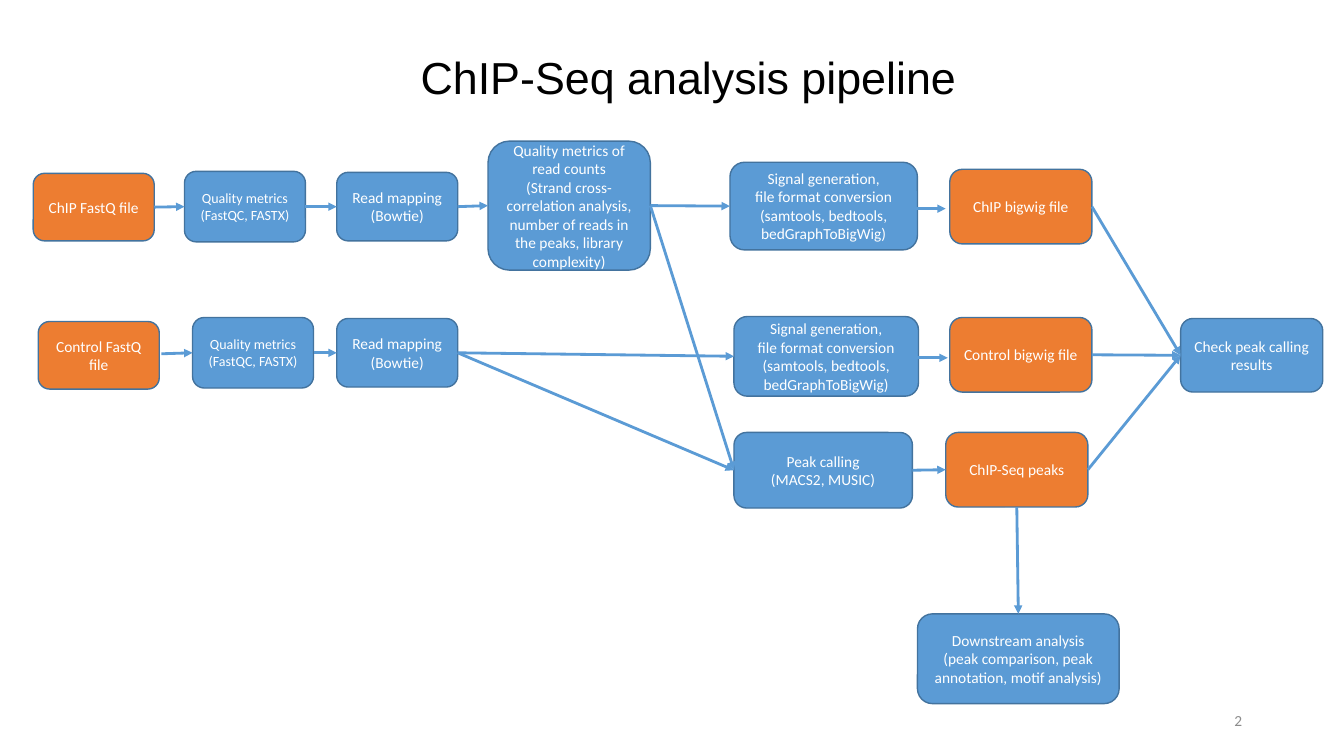
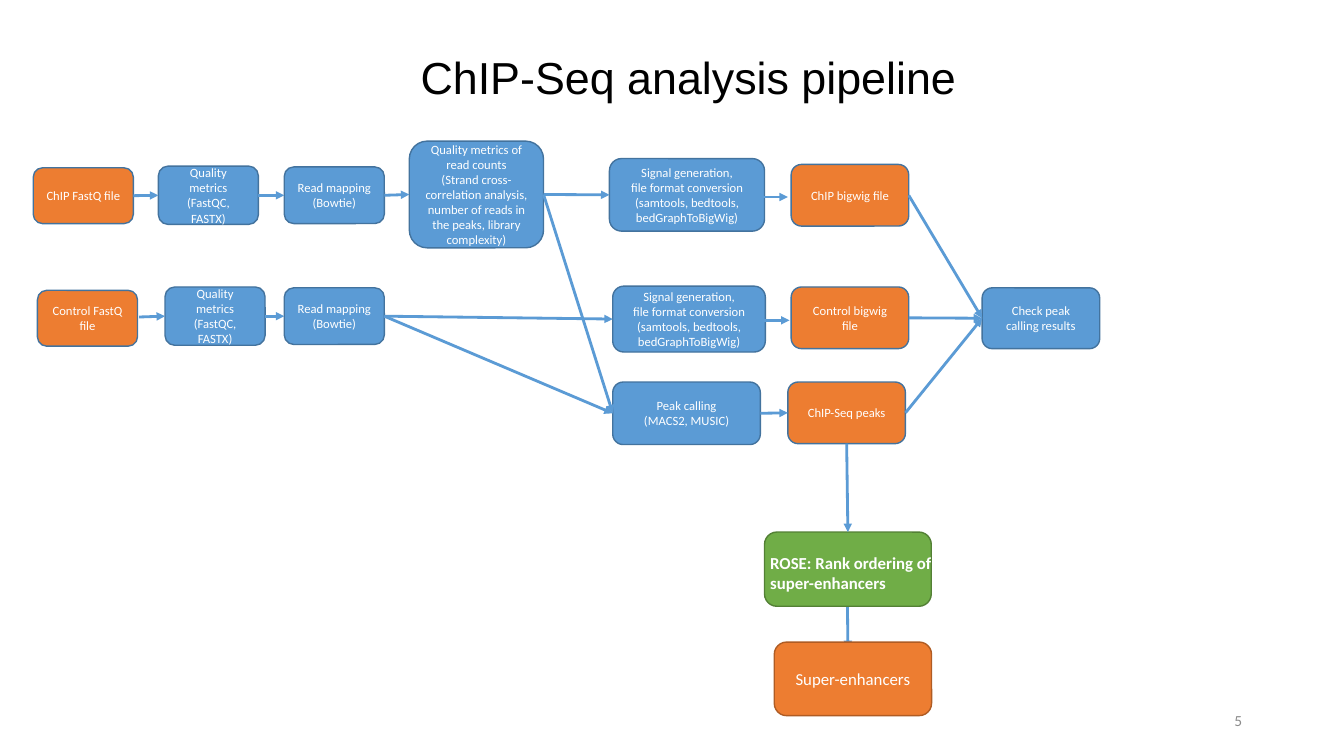
"""Build two slides of the ChIP-Seq analysis pipeline."""
from dataclasses import dataclass
from typing import Any, NamedTuple

from lxml import etree
from pptx import Presentation
from pptx.dml.color import RGBColor
from pptx.enum.shapes import MSO_CONNECTOR, MSO_SHAPE
from pptx.enum.text import MSO_ANCHOR, MSO_AUTO_SIZE, PP_ALIGN
from pptx.oxml.ns import qn
from pptx.util import Pt

ROUND, LINE = MSO_SHAPE.ROUNDED_RECTANGLE, MSO_CONNECTOR.STRAIGHT
MID, TOP = MSO_ANCHOR.MIDDLE, MSO_ANCHOR.TOP
LEFT, MAIN, RIGHT = PP_ALIGN.LEFT, PP_ALIGN.CENTER, PP_ALIGN.RIGHT
PX = 9144
HUE = {
    "black": "000000", "white": "FFFFFF", "gray": "8C8C8C",
    "blue": "5B9BD5", "navy": "43739E", "orange": "ED7D31",
    "rust": "AF5C24", "green": "70AD47", "moss": "538035",
}
FRAME = {"word_wrap": True, "auto_size": MSO_AUTO_SIZE.NONE, "vertical_anchor": MID}


class Rect(NamedTuple):
    """Left, top, width and height in px."""
    x: int
    y: int
    w: int
    h: int


class Spot(NamedTuple):
    """Free end of an arrow in px."""
    x: int
    y: int


class Joint(NamedTuple):
    """Arrow end at a side of a named box."""
    name: str
    side: int


@dataclass(frozen=True)
class Box:
    """Rounded box with its lines of text."""
    name: str
    rect: Rect
    lines: tuple[str, ...]
    fill: str = "blue"
    edge: str = "navy"
    size: int = 11


@dataclass(frozen=True)
class Link:
    """Arrow between two ends."""
    start: Joint | Spot
    end: Joint | Spot


@dataclass(frozen=True)
class View:
    """Zoom of the flow, kept at its top left corner."""
    zoom: float = 1.0
    cap: int = 11

    def spot(self, x: int, y: int) -> tuple[int, int]:
        """Give a point in EMU."""
        return (round((33 + (x - 33) * self.zoom) * PX),
                round((140 + (y - 140) * self.zoom) * PX))

    def rect(self, r: Rect) -> tuple[int, ...]:
        """Give a rectangle in EMU."""
        return *self.spot(r.x, r.y), round(r.w * self.zoom * PX), round(r.h * self.zoom * PX)


FULL, SMALL = View(), View(0.827, 9)
CHECK = ("Quality metrics", "(FastQC, FASTX)")
READ = ("Read mapping", "(Bowtie)")
SIGNAL = ("Signal generation,", "file format conversion", "(samtools, bedtools, bedGraphToBigWig)")
LAST = Rect(910, 609, 200, 89)
FLOW = (
    Box("chip", Rect(33, 172, 120, 67), ("ChIP FastQ file",), "orange"),
    Box("chip check", Rect(183, 170, 120, 70), CHECK, size=10),
    Box("chip map", Rect(334, 171, 120, 68), READ),
    Box("counts", Rect(484, 140, 161, 128), (
        "Quality metrics of read counts",
        "(Strand cross-correlation analysis, number of reads in the peaks, library complexity)")),
    Box("chip signal", Rect(724, 161, 186, 87), SIGNAL),
    Box("chip wig", Rect(942, 168, 141, 74), ("ChIP bigwig file",), "orange"),
    Box("control", Rect(38, 319, 120, 67), ("Control FastQ file",), "orange"),
    Box("control check", Rect(191, 315, 120, 70), CHECK, size=10),
    Box("control map", Rect(334, 316, 120, 68), READ),
    Box("control signal", Rect(728, 314, 183, 79), SIGNAL),
    Box("control wig", Rect(942, 315, 141, 74), ("Control bigwig file",), "orange"),
    Box("call", Rect(728, 429, 177, 75), ("Peak calling", "(MACS2, MUSIC)")),
    Box("peaks", Rect(938, 429, 141, 74), ("ChIP-Seq peaks",), "orange"),
    Box("result", Rect(1171, 316, 141, 73), ("Check peak calling results",)),
)
PAIRS = (
    ("chip", "chip check"), ("chip check", "chip map"), ("chip map", "counts"),
    ("counts", "chip signal"), ("counts", "call"),
    ("control check", "control map"), ("control map", "control signal"),
    ("control map", "call"), ("call", "peaks"),
    ("chip wig", "result"), ("control wig", "result"), ("peaks", "result"),
)
LINKS = (
    *(Link(Joint(a, 3), Joint(b, 1)) for a, b in PAIRS),
    Link(Joint("peaks", 2), Joint("last", 0)),
    Link(Spot(160, 351), Joint("control check", 1)),
    Link(Spot(908, 207), Spot(938, 207)),
    Link(Spot(909, 355), Spot(940, 355)),
)
DOWN = Box("last", LAST, ("Downstream analysis", "(peak comparison, peak annotation, motif analysis)"))
RANK = Box("last", LAST, (), "green", "moss")
SUPER = Box("super", Rect(768, 637, 156, 73), ("Super-enhancers",), "orange", "rust", 12)


def apply(item: Any, form: dict[str, Any]) -> None:
    """Set each format value on the item."""
    for key, val in form.items():
        setattr(item, key, val)


def tint(name: str) -> RGBColor:
    """Look up a colour."""
    return RGBColor.from_string(HUE[name])


def write(frame: Any, lines: tuple[str, ...], size: int, ink: str = "white",
          face: str = "Calibri", align: Any = MAIN, bold: bool = False,
          space: float = 1.0, anchor: Any = MID) -> None:
    """Write lines as paragraphs of one style."""
    apply(frame, FRAME | {"vertical_anchor": anchor})
    frame.text = "\n".join(lines)
    for par in frame.paragraphs:
        apply(par, {"alignment": align, "line_spacing": space})
        for run in par.runs:
            apply(run.font, {"name": face, "size": Pt(size), "bold": bold})
            run.font.color.rgb = tint(ink)


def label(slide: Any, rect: Rect, text: str, size: int, **form: Any) -> None:
    """Add a text box."""
    write(slide.shapes.add_textbox(*FULL.rect(rect)).text_frame, (text,), size, **form)


def draw_box(slide: Any, box: Box, view: View) -> Any:
    """Draw a rounded box."""
    shape = slide.shapes.add_shape(ROUND, *view.rect(box.rect))
    shape.shadow.inherit = False
    shape.fill.solid()
    shape.fill.fore_color.rgb = tint(box.fill)
    shape.line.color.rgb = tint(box.edge)
    shape.line.width = Pt(1)
    if box.lines:
        write(shape.text_frame, box.lines, min(box.size, view.cap))
    return shape


def draw_link(slide: Any, link: Link, view: View, made: dict[str, Any]) -> None:
    """Draw an arrow and join its ends to boxes."""
    ends = [view.spot(*e) if isinstance(e, Spot) else (0, 0) for e in (link.start, link.end)]
    line = slide.shapes.add_connector(LINE, *ends[0], *ends[1])
    for end, join in ((link.start, line.begin_connect), (link.end, line.end_connect)):
        if isinstance(end, Joint):
            join(made[end.name], end.side)
    line.line.color.rgb = tint("blue")
    line.line.width = Pt(2)
    props = line.element.spPr
    etree.SubElement(props.find(qn("a:ln")), qn("a:tailEnd"), type="triangle")
    etree.SubElement(props, qn("a:effectLst"))


def draw_flow(slide: Any, last: Box, view: View) -> None:
    """Draw the pipeline with its last step."""
    made = {box.name: draw_box(slide, box, view) for box in (*FLOW, last)}
    for link in LINKS:
        draw_link(slide, link, view, made)


def new_slide(deck: Any, page: str) -> Any:
    """Add a slide with title and page number."""
    slide = deck.slides.add_slide(deck.slide_layouts[5])
    title = slide.shapes.title
    apply(title, dict(zip(("left", "top", "width", "height"), FULL.rect(Rect(108, 7, 1150, 145)))))
    write(title.text_frame, ("ChIP-Seq analysis pipeline",), 32, "black", "Arial", space=0.9)
    label(slide, Rect(942, 695, 300, 40), page, 11, ink="gray", align=RIGHT)
    return slide


def main() -> None:
    """Build and save the deck."""
    deck = Presentation()
    apply(deck, {"slide_width": 1333 * PX, "slide_height": 750 * PX})
    draw_flow(new_slide(deck, "2"), DOWN, FULL)

    slide = new_slide(deck, "5")
    draw_link(slide, Link(Spot(840, 557), Spot(841, 644)), FULL, {})
    draw_flow(slide, RANK, SMALL)
    draw_box(slide, SUPER, View(cap=12))
    label(slide, Rect(754, 543, 191, 50), "ROSE: Rank ordering of super-enhancers", 12,
          align=LEFT, bold=True, anchor=TOP)
    deck.save("out.pptx")


if __name__ == "__main__":
    main()
